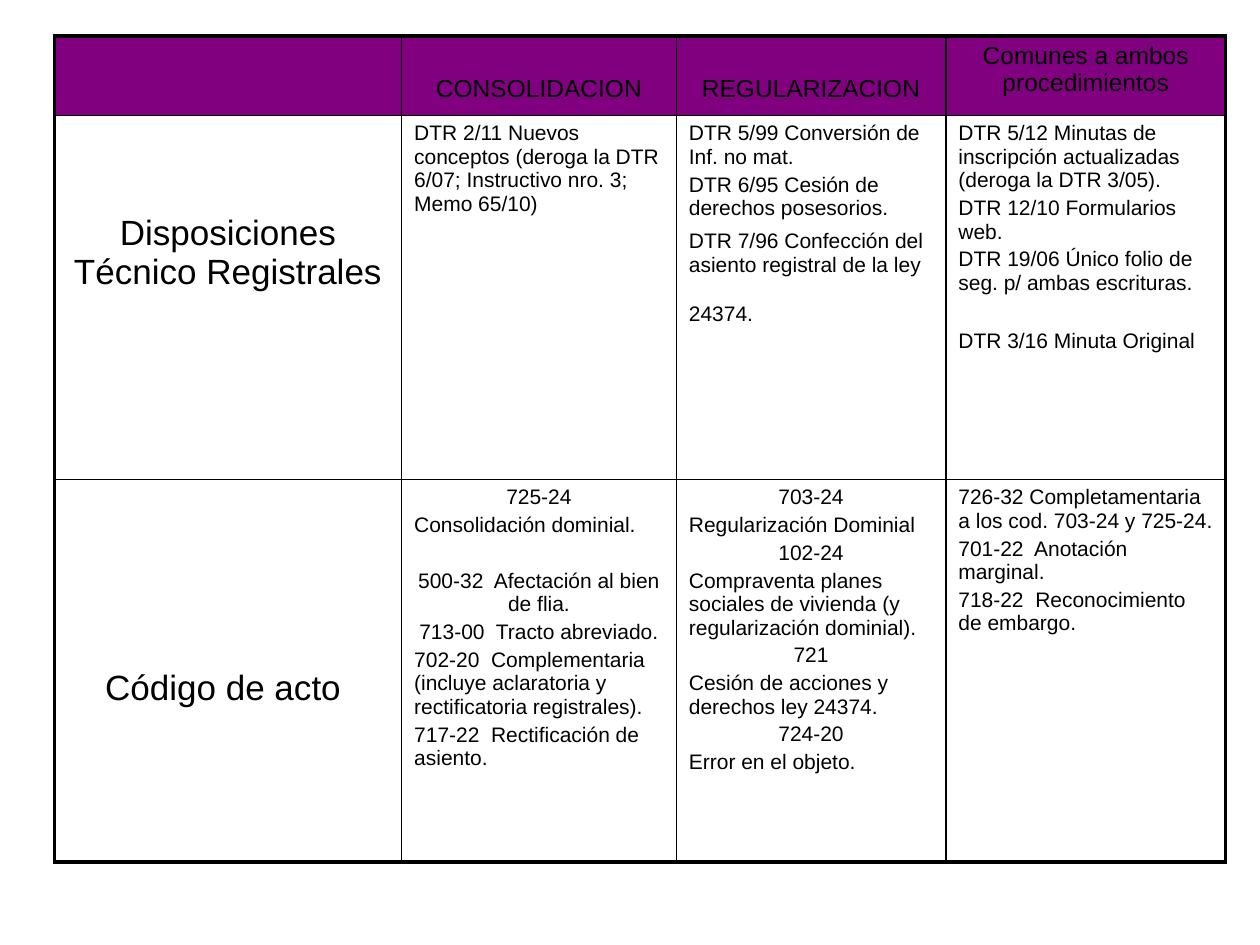
import dataclasses

import lxml.etree
import pptx
import pptx.dml.color
import pptx.enum.text
import pptx.oxml.ns
import pptx.util

Pt = pptx.util.Pt
ALIGN = pptx.enum.text.PP_ALIGN

PURPLE = pptx.dml.color.RGBColor(0x80, 0x00, 0x80)
WHITE = pptx.dml.color.RGBColor(0xFF, 0xFF, 0xFF)
BLACK = pptx.dml.color.RGBColor(0x00, 0x00, 0x00)

FONT = "Arial"
COLUMN_WIDTHS = (198.5, 157, 154, 160)
ROW_HEIGHTS = (45.5, 208, 218.5)
OUTER_BORDER = 2.25
INNER_BORDER = 1
INSET = 3.6


@dataclasses.dataclass
class Line:
    text: str
    centered: bool = False
    space_before: float = 2.4
    tail_size: float = 0  # size of a closing space that makes the last line taller


@dataclasses.dataclass
class Content:
    lines: list
    size: float = 12
    top_inset: float = INSET


def heading(text, size, top_inset):
    return Content([Line(text, centered=True)], size, top_inset)


def centered(text, space_before=2.4):
    return Line(text, True, space_before)


ROWS = [
    [
        Content([]),
        heading("CONSOLIDACION", 14, 22.5),
        heading("REGULARIZACION", 14, 22.5),
        heading("Comunes a ambos procedimientos", 14, INSET),
    ],
    [
        heading("Disposiciones Técnico Registrales", 20, 56),
        Content([Line("DTR 2/11 Nuevos conceptos (deroga la DTR 6/07; "
                      "Instructivo nro. 3; Memo 65/10)")]),
        Content([
            Line("DTR 5/99 Conversión de Inf. no mat."),
            Line("DTR 6/95 Cesión de derechos posesorios."),
            Line("DTR 7/96 Confección del asiento registral de la ley 24374.",
                 space_before=5.6, tail_size=28),
        ]),
        Content([
            Line("DTR 5/12 Minutas de inscripción actualizadas (deroga la DTR 3/05)."),
            Line("DTR 12/10 Formularios web."),
            Line("DTR 19/06 Único folio de seg. p/ ambas escrituras."),
            Line("DTR 3/16 Minuta Original", space_before=5.6, tail_size=28),
        ]),
    ],
    [
        heading("Código de acto ", 20, 108.5),
        Content([
            centered("725-24"),
            Line("Consolidación dominial."),
            centered("500-32  Afectación al bien de flia.", space_before=18.5),
            centered("713-00  Tracto abreviado."),
            Line("702-20  Complementaria (incluye aclaratoria y "
                 "rectificatoria registrales)."),
            Line("717-22  Rectificación de asiento."),
        ]),
        Content([
            centered("703-24"),
            Line("Regularización Dominial"),
            centered("102-24"),
            Line("Compraventa planes sociales de vivienda (y regularización dominial)."),
            centered("721"),
            Line("Cesión de acciones y derechos ley 24374."),
            centered("724-20"),
            Line("Error en el objeto."),
        ]),
        Content([
            Line("726-32 Completamentaria a los cod. 703-24 y 725-24."),
            Line("701-22  Anotación marginal."),
            Line("718-22  Reconocimiento de embargo."),
        ]),
    ],
]


def set_borders(cell, widths):
    """Draw the cell's borders; widths maps the sides L, R, T, B to points."""
    properties = cell._tc.get_or_add_tcPr()
    qn = pptx.oxml.ns.qn
    for index, (side, width) in enumerate(widths.items()):
        line = lxml.etree.Element(qn(f"a:ln{side}"), w=str(int(Pt(width))))
        fill = lxml.etree.SubElement(line, qn("a:solidFill"))
        lxml.etree.SubElement(fill, qn("a:srgbClr"), val=str(BLACK))
        properties.insert(index, line)


def border_widths(row, column):
    """Use the heavy border on the sides that lie on the table's edge."""
    on_edge = {
        "L": column == 0,
        "R": column == len(COLUMN_WIDTHS) - 1,
        "T": row == 0,
        "B": row == len(ROW_HEIGHTS) - 1,
    }
    return {side: OUTER_BORDER if edge else INNER_BORDER
            for side, edge in on_edge.items()}


def write_line(paragraph, line, size):
    paragraph.alignment = ALIGN.CENTER if line.centered else ALIGN.LEFT
    paragraph.space_before = Pt(line.space_before)
    paragraph.font.name = FONT
    paragraph.font.size = Pt(size)
    paragraph.font.color.rgb = BLACK
    paragraph.add_run().text = line.text
    if line.tail_size:
        tail = paragraph.add_run()
        tail.text = " "
        tail.font.size = Pt(line.tail_size)


def fill_cell(cell, content):
    cell.margin_top = Pt(content.top_inset)
    cell.margin_bottom = Pt(INSET)
    for index, line in enumerate(content.lines):
        frame = cell.text_frame
        paragraph = frame.add_paragraph() if index else frame.paragraphs[0]
        write_line(paragraph, line, content.size)


def add_procedures_table(slide):
    shape = slide.shapes.add_table(
        len(ROW_HEIGHTS), len(COLUMN_WIDTHS), Pt(31), Pt(20.5),
        Pt(sum(COLUMN_WIDTHS)), Pt(sum(ROW_HEIGHTS)))
    table = shape.table
    table.first_row = False
    table.horz_banding = False
    for column, width in zip(table.columns, COLUMN_WIDTHS):
        column.width = Pt(width)
    for row, height in zip(table.rows, ROW_HEIGHTS):
        row.height = Pt(height)
    for row_index, contents in enumerate(ROWS):
        for column_index, content in enumerate(contents):
            cell = table.cell(row_index, column_index)
            cell.fill.solid()
            cell.fill.fore_color.rgb = WHITE if row_index else PURPLE
            set_borders(cell, border_widths(row_index, column_index))
            fill_cell(cell, content)


def main():
    presentation = pptx.Presentation()
    presentation.slide_width = Pt(720)
    presentation.slide_height = Pt(540)
    slide = presentation.slides.add_slide(presentation.slide_layouts[6])
    add_procedures_table(slide)
    presentation.save("out.pptx")


if __name__ == "__main__":
    main()
